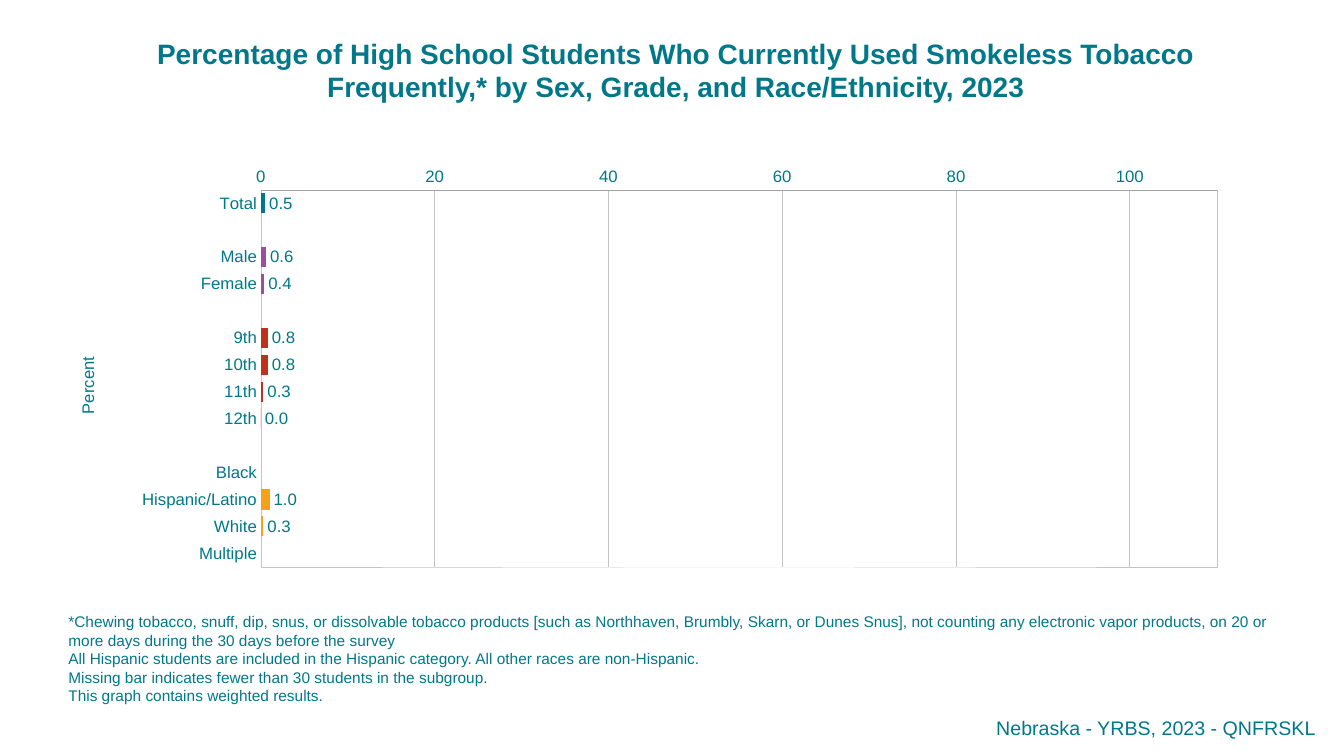
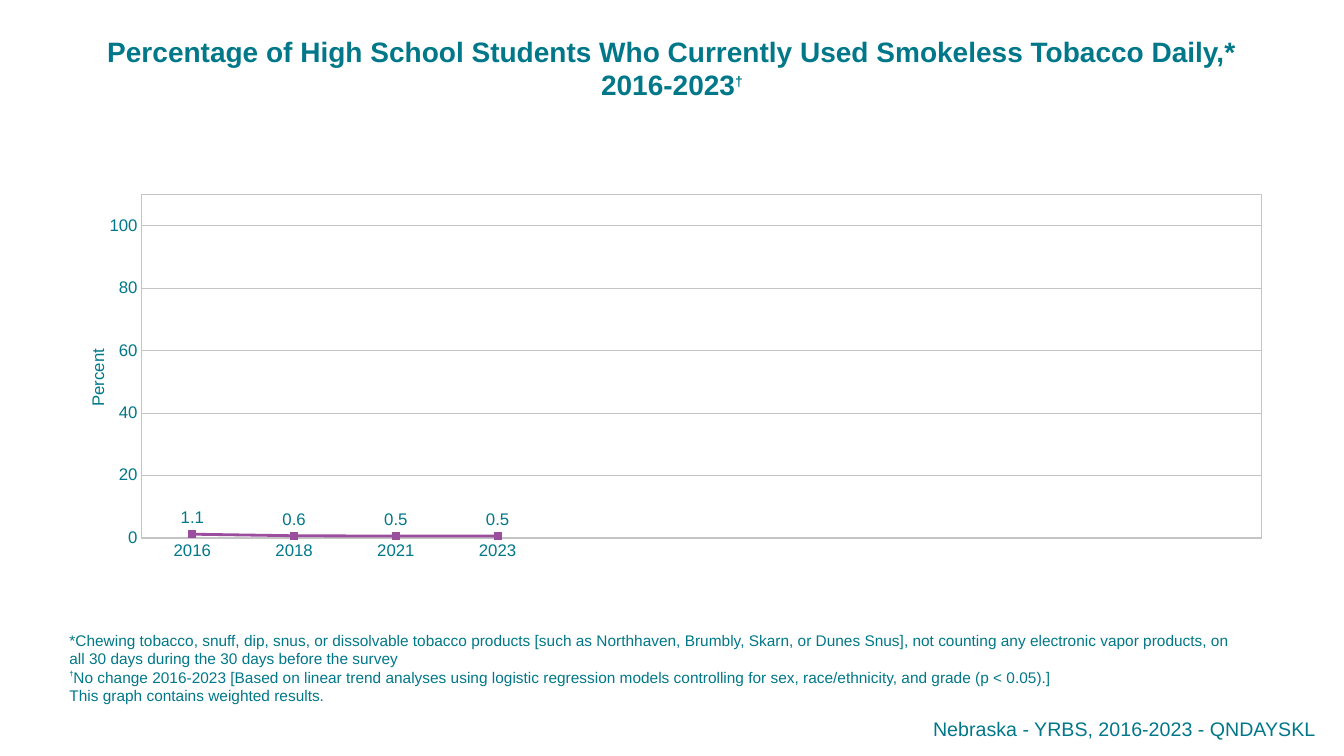
from lxml import etree
from pptx import Presentation
from pptx.chart.data import CategoryChartData
from pptx.dml.color import RGBColor
from pptx.enum.chart import XL_CHART_TYPE as CT, XL_LABEL_POSITION as LP
from pptx.enum.chart import XL_MARKER_STYLE as MS, XL_TICK_MARK as TM
from pptx.enum.text import MSO_ANCHOR as MA, PP_ALIGN as AL
from pptx.oxml import parse_xml
from pptx.oxml.ns import nsdecls, qn
from pptx.util import Inches, Pt

FONT = "Arial"
COLORS = {
    "teal": "007889",
    "footer": "00788A",
    "purple": "9B4E9E",
    "red": "BF311B",
    "orange": "F7A01B",
    "grid": "C4C4C4",
    "axis": "A3A3A3",
}
BAR_GROUPS = [
    ("teal", [("Total", 0.5)]),
    ("purple", [("Male", 0.6), ("Female", 0.4)]),
    ("red", [("9th", 0.8), ("10th", 0.8), ("11th", 0.3), ("12th", 0)]),
    ("orange", [("Black", None), ("Hispanic/Latino", 1), ("White", 0.3), ("Multiple", None)]),
]
TREND = [("2016", 1.1), ("2018", 0.6), ("2021", 0.5), ("2023", 0.5)] + [("", None)] * 7
PRODUCTS = (
    "*Chewing tobacco, snuff, dip, snus, or dissolvable tobacco products [such as "
    "Northhaven, Brumbly, Skarn, or Dunes Snus], not counting any electronic vapor "
    "products, on {} days during the 30 days before the survey"
)
WEIGHTED = "This graph contains weighted results."


def rgb(name):
    return RGBColor.from_string(COLORS[name])


def style_font(font, size, color="teal", bold=False):
    font.name = FONT
    font.size = Pt(size)
    font.bold = bold
    font.color.rgb = rgb(color)


def style_line(line, color, width):
    line.color.rgb = rgb(color)
    line.width = Pt(width)


def add_runs(p, text, sup_size, sup_base):
    before, dagger, after = text.partition("†")
    for part in filter(None, (before, dagger, after)):
        r = p.add_run()
        r.text = part
        if part == "†":
            r.font.size = Pt(sup_size)
            r.font.bold = True
            r.font._element.set("baseline", str(sup_base * 1000))


def add_text(s, box, lines, size, align=AL.LEFT, anchor=MA.TOP, color="teal",
             bold=False, sup_size=9, sup_base=50):
    tf = s.shapes.add_textbox(*map(Inches, box)).text_frame
    tf.word_wrap = True
    tf.vertical_anchor = anchor
    for i, line in enumerate(lines):
        p = tf.add_paragraph() if i else tf.paragraphs[0]
        p.alignment = align
        style_font(p.font, size, color, bold)
        add_runs(p, line, sup_size, sup_base)


def add_title(s, box, text):
    add_text(s, box, [text], 20, AL.CENTER, bold=True, sup_size=17, sup_base=40)


def add_notes(s, box, lines):
    add_text(s, box, lines, 11, anchor=MA.BOTTOM)


def add_footer(s, top, text):
    add_text(s, (3.75, top, 9.4, 0.34), [text], 14, AL.RIGHT, color="footer")


def set_layout(parent, index, values, inner=False):
    for old in parent.findall(qn("c:layout")):
        parent.remove(old)
    layout = etree.Element(qn("c:layout"))
    manual = etree.SubElement(layout, qn("c:manualLayout"))
    settings = [("layoutTarget", "inner")] if inner else []
    settings += [("xMode", "edge"), ("yMode", "edge")]
    settings += zip("xywh", values)
    for tag, value in settings:
        etree.SubElement(manual, qn(f"c:{tag}")).set("val", str(value))
    parent.insert(index, layout)


def frame_plot(chart, layout):
    plot_area = chart._chartSpace.chart.plotArea
    set_layout(plot_area, 0, layout, inner=True)
    plot_area.append(parse_xml(
        f'<c:spPr {nsdecls("c", "a")}><a:noFill/><a:ln w="3175"><a:solidFill>'
        f'<a:srgbClr val="{COLORS["grid"]}"/></a:solidFill></a:ln></c:spPr>'))


def style_axis(axis, line_color):
    axis.major_tick_mark = axis.minor_tick_mark = TM.NONE
    style_font(axis.tick_labels.font, 12)
    style_line(axis.format.line, line_color, 0.25)


def style_value_axis(axis, line_color, grid_width, title_at):
    style_axis(axis, line_color)
    axis.minimum_scale, axis.maximum_scale, axis.major_unit = 0, 110, 20
    axis.has_major_gridlines = True
    style_line(axis.major_gridlines.format.line, "grid", grid_width)
    axis.tick_labels.number_format = "#,##0"
    axis.tick_labels.number_format_is_linked = False
    title = axis.axis_title
    tf = title.text_frame
    tf.text = "Percent"
    style_font(tf.paragraphs[0].font, 12)
    body = tf._txBody.find(qn("a:bodyPr"))
    body.set("rot", "-5400000")
    body.set("vert", "horz")
    set_layout(title._element, 1, title_at)


def add_percent_chart(s, kind, box, rows, layout, title_at, axis_color, grid_width, label_pos):
    data = CategoryChartData()
    data.categories = [name for name, _ in rows]
    data.add_series("Series 1", [value for _, value in rows])
    chart = s.shapes.add_chart(kind, *map(Inches, box), data).chart
    chart.has_title = chart.has_legend = False
    style_font(chart.font, 12)
    frame_plot(chart, layout)
    style_axis(chart.category_axis, "grid")
    chart.category_axis.has_major_gridlines = False
    style_value_axis(chart.value_axis, axis_color, grid_width, title_at)
    plot = chart.plots[0]
    plot.vary_by_categories = False
    plot.has_data_labels = True
    labels = plot.data_labels
    labels.show_value = True
    labels.number_format = "#,##0.0"
    labels.number_format_is_linked = False
    labels.position = label_pos
    style_font(labels.font, 12)
    return chart


def add_bar_chart(s):
    rows, fills = [], []
    for color, group in BAR_GROUPS:
        if rows:
            rows.append(("", None))
            fills.append(color)
        rows += group
        fills += [color] * len(group)
    chart = add_percent_chart(
        s, CT.BAR_CLUSTERED, (0.58, 1.67, 12.17, 4.67), rows,
        (0.165, 0.035, 0.779, 0.81), (0.013, 0.388), "axis", 0.5, LP.OUTSIDE_END)
    chart.category_axis.reverse_order = True
    plot = chart.plots[0]
    plot.gap_width = 34
    series = plot.series[0]
    series.invert_if_negative = False
    series.format.fill.solid()
    series.format.fill.fore_color.rgb = rgb("teal")
    for i, color in enumerate(fills):
        if rows[i][1] is not None:
            fill = series.points[i].format.fill
            fill.solid()
            fill.fore_color.rgb = rgb(color)


def add_trend_chart(s):
    chart = add_percent_chart(
        s, CT.LINE_MARKERS, (0.57, 1.77, 12.08, 4.15), TREND,
        (0.069, 0.038, 0.919, 0.821), (0.022, 0.4), "grid", 0.25, LP.ABOVE)
    series = chart.plots[0].series[0]
    series.smooth = False
    style_line(series.format.line, "purple", 2)
    marker = series.marker
    marker.style = MS.SQUARE
    marker.size = 5
    marker.format.fill.solid()
    marker.format.fill.fore_color.rgb = rgb("purple")
    style_line(marker.format.line, "purple", 0.75)


def build_groups_slide(s):
    add_bar_chart(s)
    add_notes(s, (0.58, 6.02, 12.17, 1.02), [
        PRODUCTS.format("20 or more"),
        "All Hispanic students are included in the Hispanic category. "
        "All other races are non-Hispanic.",
        "Missing bar indicates fewer than 30 students in the subgroup.",
        WEIGHTED,
    ])
    add_title(s, (0.75, 0.31, 11.91, 0.77),
              "Percentage of High School Students Who Currently Used Smokeless Tobacco "
              "Frequently,* by Sex, Grade, and Race/Ethnicity, 2023")
    add_footer(s, 7.05, "Nebraska - YRBS, 2023 - QNFRSKL")


def build_trend_slide(s):
    add_title(s, (0.83, 0.29, 11.67, 0.77),
              "Percentage of High School Students Who Currently Used Smokeless Tobacco "
              "Daily,* 2016-2023†")
    add_notes(s, (0.59, 6.2, 11.83, 0.84), [
        PRODUCTS.format("all 30"),
        "†No change 2016-2023 [Based on linear trend analyses using logistic regression "
        "models controlling for sex, race/ethnicity, and grade (p < 0.05).]",
        WEIGHTED,
    ])
    add_trend_chart(s)
    add_footer(s, 7.06, "Nebraska - YRBS, 2016-2023 - QNDAYSKL")


def main():
    prs = Presentation()
    prs.slide_width, prs.slide_height = Inches(13.33), Inches(7.5)
    for build in (build_groups_slide, build_trend_slide):
        build(prs.slides.add_slide(prs.slide_layouts[6]))
    prs.save("out.pptx")


if __name__ == "__main__":
    main()
